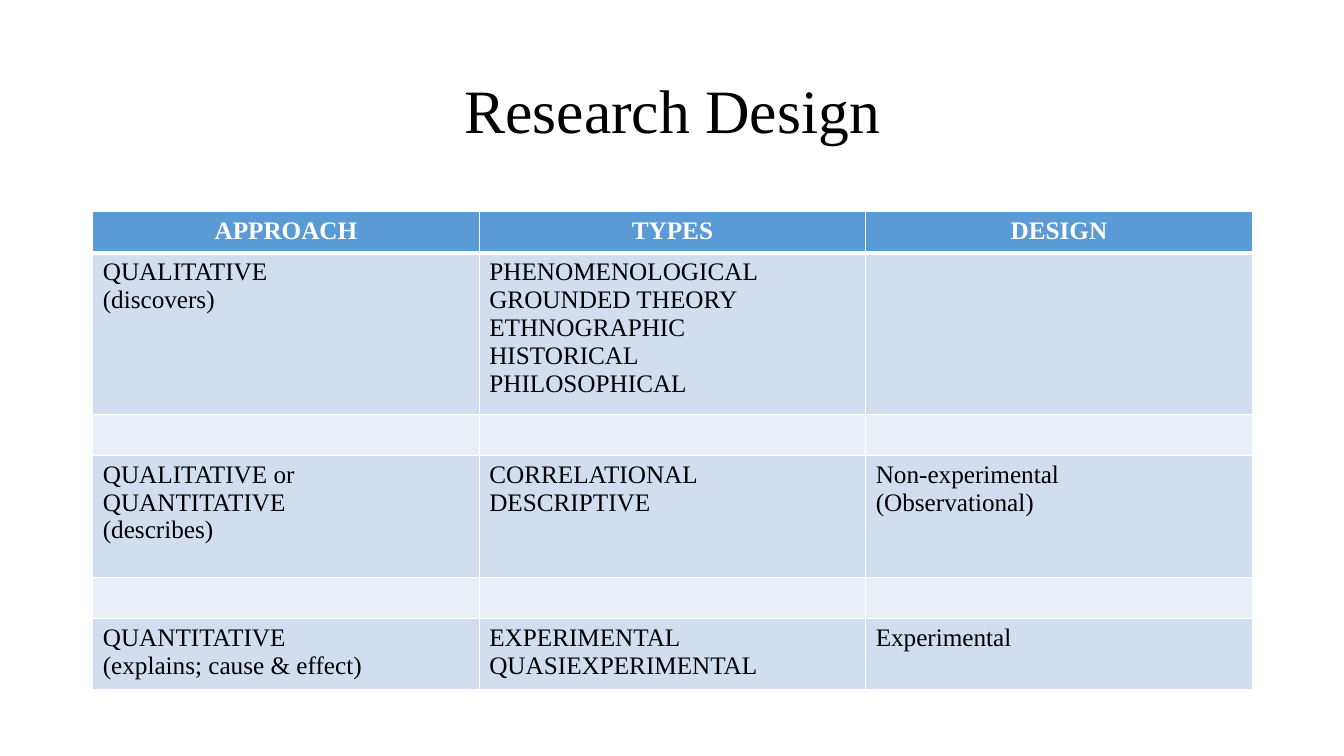
from dataclasses import dataclass

from lxml.etree import SubElement
from pptx import Presentation
from pptx.dml.color import RGBColor
from pptx.enum.text import MSO_ANCHOR, PP_ALIGN
from pptx.oxml.ns import qn
from pptx.util import Inches, Pt

FONT = "Times New Roman"
WHITE, BLACK = "FFFFFF", "000000"
BLUE, BAND, PALE = "5B9BD5", "D2DEEF", "EAEFF7"
LEFT, WIDTH = 0.92, 11.5


@dataclass
class Row:
    height: float
    fill: str
    texts: tuple[str, str, str] = ("", "", "")


ROWS = [
    Row(0.41, BLUE, ("APPROACH", "TYPES", "DESIGN")),
    Row(1.47, BAND, (
        "QUALITATIVE\n(discovers)",
        "PHENOMENOLOGICAL GROUNDED THEORY\nETHNOGRAPHIC\nHISTORICAL\nPHILOSOPHICAL",
        "",
    )),
    Row(0.41, PALE),
    Row(1.21, BAND, (
        "QUALITATIVE or\nQUANTITATIVE\n(describes)",
        "CORRELATIONAL\nDESCRIPTIVE",
        "Non-experimental\n(Observational)",
    )),
    Row(0.41, PALE),
    Row(0.64, BAND, (
        "QUANTITATIVE\n(explains; cause & effect)",
        "EXPERIMENTAL\nQUASIEXPERIMENTAL",
        "Experimental",
    )),
]


def rgb(color: str) -> RGBColor:
    return RGBColor.from_string(color)


def style_text(tf, size: int, color: str, bold: bool, align) -> None:
    for p in tf.paragraphs:
        p.alignment = align
        for r in p.runs:
            r.font.name = FONT
            r.font.size = Pt(size)
            r.font.bold = bold
            r.font.color.rgb = rgb(color)


def add_borders(cell, top: int, bottom: int) -> None:
    tc_pr = cell._tc.get_or_add_tcPr()
    sides = {"lnL": 1, "lnR": 1, "lnT": top, "lnB": bottom}
    for i, (side, width) in enumerate(sides.items()):
        ln = SubElement(tc_pr, qn(f"a:{side}"), w=str(Pt(width)))
        SubElement(SubElement(ln, qn("a:solidFill")), qn("a:srgbClr"), val=WHITE)
        tc_pr.insert(i, ln)


def add_title(s, text: str) -> None:
    sp = s.shapes.add_textbox(Inches(LEFT), Inches(0.4), Inches(WIDTH), Inches(1.45))
    tf = sp.text_frame
    tf.word_wrap = True
    tf.vertical_anchor = MSO_ANCHOR.MIDDLE
    tf.text = text
    tf.paragraphs[0].line_spacing = 0.9
    style_text(tf, 44, BLACK, False, PP_ALIGN.CENTER)


def add_design_table(s, rows: list[Row]) -> None:
    height = sum(row.height for row in rows)
    table = s.shapes.add_table(
        len(rows), 3, Inches(LEFT), Inches(2.1), Inches(WIDTH), Inches(height)
    ).table
    for i, row in enumerate(rows):
        table.rows[i].height = Inches(row.height)
        header = i == 0
        for j, text in enumerate(row.texts):
            cell = table.cell(i, j)
            cell.fill.solid()
            cell.fill.fore_color.rgb = rgb(row.fill)
            add_borders(cell, 3 if i == 1 else 1, 3 if header else 1)
            cell.text_frame.text = text
            style_text(cell.text_frame, 18, WHITE if header else BLACK, header,
                       PP_ALIGN.CENTER if header else PP_ALIGN.LEFT)


def main() -> None:
    prs = Presentation()
    prs.slide_width, prs.slide_height = Inches(13.33), Inches(7.5)
    s = prs.slides.add_slide(prs.slide_layouts[6])
    add_title(s, "Research Design")
    add_design_table(s, ROWS)
    prs.save("out.pptx")


if __name__ == "__main__":
    main()
